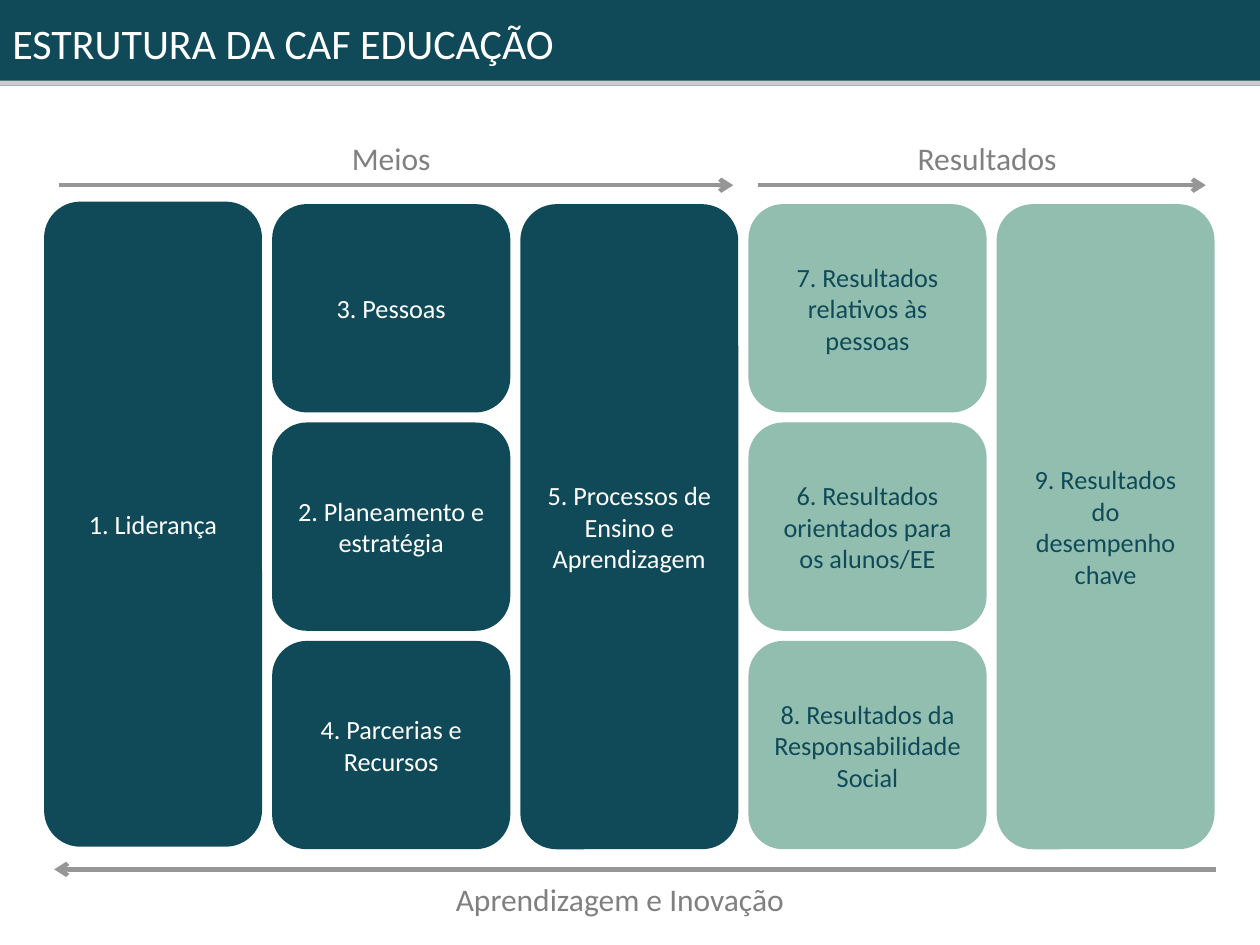
"""Build the slide showing the structure of the CAF Educação model."""
from lxml import etree
from pptx import Presentation
from pptx.dml.color import RGBColor
from pptx.enum.shapes import MSO_CONNECTOR, MSO_SHAPE
from pptx.enum.text import MSO_ANCHOR, PP_ALIGN
from pptx.oxml.ns import qn
from pptx.util import Inches, Pt

RECTANGLE, ROUNDED = MSO_SHAPE.RECTANGLE, MSO_SHAPE.ROUNDED_RECTANGLE
STRAIGHT = MSO_CONNECTOR.STRAIGHT
MIDDLE = MSO_ANCHOR.MIDDLE
LEFT, CENTER = PP_ALIGN.LEFT, PP_ALIGN.CENTER

COLORS = {"teal": "104A58", "green": "92BEAF", "white": "FFFFFF",
          "rule": "CCCCCC", "label": "808080", "arrow": "969696"}
FONT = "Calibri"

TITLE = "ESTRUTURA DA CAF EDUCAÇÃO"
MEANS, RESULTS = ("teal", "white"), ("green", "teal")
COLUMNS = [
    (1.73, 1.6, MEANS, ["1. Liderança"]),
    (1.89, 1.62, MEANS, ["3. Pessoas", "2. Planeamento e estratégia",
                         "4. Parcerias e Recursos"]),
    (1.73, 1.62, MEANS, ["5. Processos de Ensino e Aprendizagem"]),
    (1.89, 1.62, RESULTS, ["7. Resultados relativos às pessoas",
                           "6. Resultados orientados para os alunos/EE",
                           "8. Resultados da Responsabilidade Social"]),
    (1.73, 1.62, RESULTS, ["9. Resultados do desempenho chave"]),
]
GRID_LEFT, GRID_HEIGHT, GAP = 0.35, 5.12, 0.08
LABELS = [
    ("Meios", (2.24, 0.94, 1.73, 0.63)),
    ("Resultados", (6.97, 0.94, 1.73, 0.63)),
    ("Aprendizagem e Inovação", (2.48, 6.82, 4.88, 0.63)),
]
ARROWS = [(0.47, 5.82, 1.47), (6.02, 9.57, 1.47), (9.65, 0.43, 6.9)]


def rgb(name):
    return RGBColor.from_string(COLORS[name])


def add_box(slide, kind, place, fill=None, text="", color="white", size=15, align=CENTER):
    shape = slide.shapes.add_shape(kind, *map(Inches, place))
    shape.shadow.inherit = False
    shape.line.fill.background()
    if fill:
        shape.fill.solid()
        shape.fill.fore_color.rgb = rgb(fill)
    else:
        shape.fill.background()
    if text:
        frame = shape.text_frame
        frame.word_wrap = True
        frame.vertical_anchor = MIDDLE
        paragraph = frame.paragraphs[0]
        paragraph.alignment = align
        run = paragraph.add_run()
        run.text = text
        for name, value in {"name": FONT, "size": Pt(size)}.items():
            setattr(run.font, name, value)
        run.font.color.rgb = rgb(color)


def add_arrow(slide, start, end, height):
    ends = map(Inches, (start, height, end, height))
    connector = slide.shapes.add_connector(STRAIGHT, *ends)
    connector.line.color.rgb = rgb("arrow")
    connector.line.width = Pt(2.5)
    properties = connector.element.spPr
    line = properties.find(qn("a:ln"))
    etree.SubElement(line, qn("a:tailEnd")).set("type", "arrow")
    etree.SubElement(properties, qn("a:effectLst"))


def add_columns(slide):
    left = GRID_LEFT
    for width, top, (fill, color), texts in COLUMNS:
        height = (GRID_HEIGHT - GAP * (len(texts) - 1)) / len(texts)
        for row, text in enumerate(texts):
            place = (left, top + row * (height + GAP), width, height)
            add_box(slide, ROUNDED, place, fill, text, color)
        left += width + GAP


def main():
    presentation = Presentation()
    presentation.slide_width, presentation.slide_height = Inches(10), Inches(7.5)
    slide = presentation.slides.add_slide(presentation.slide_layouts[6])
    add_box(slide, RECTANGLE, (0, 0, 10, 0.68), "teal", TITLE, size=24, align=LEFT)
    add_box(slide, RECTANGLE, (0, 0.64, 10, 0.04), "rule")
    add_columns(slide)
    for text, place in LABELS:
        add_box(slide, ROUNDED, place, None, text, "label", 18)
    for arrow in ARROWS:
        add_arrow(slide, *arrow)
    presentation.save("out.pptx")


if __name__ == "__main__":
    main()
